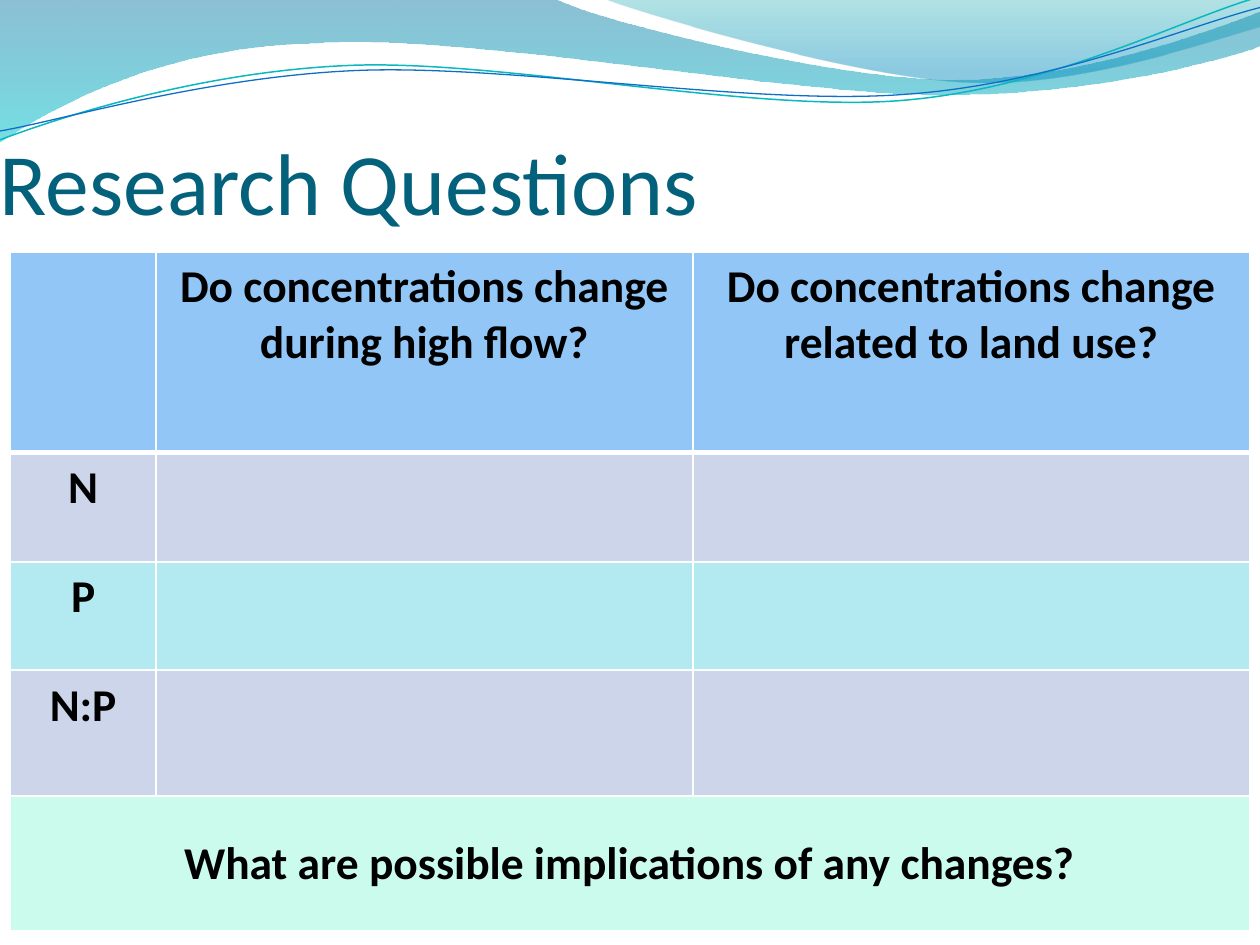
from lxml import etree
from pptx import Presentation
from pptx.dml.color import RGBColor
from pptx.enum.text import MSO_ANCHOR, PP_ALIGN
from pptx.oxml.ns import qn
from pptx.util import Inches, Pt

CENTER = PP_ALIGN.CENTER
TOP, MIDDLE, BOTTOM = MSO_ANCHOR.TOP, MSO_ANCHOR.MIDDLE, MSO_ANCHOR.BOTTOM

THEME = {
    "font": "Calibri", "title_size": 50, "table_size": 26,
    "title": "04617B", "text": "000000", "border": "FFFFFF",
    "header": "91C6F7", "odd": "CCD5EA", "even": "B3EAF2", "footer": "CAFBED",
    "left_wave": [(0, "0074A1", 45), (1, "00C6CF", 55)],
    "right_wave": [(0, "00A1A9", 30), (0.8, "008BBF", 45)],
    "teal_line": ("0AB8BF", 0.85), "blue_line": ("0F6FC6", 0.75),
}

deck = Presentation()
deck.slide_width, deck.slide_height = Inches(10), Inches(7.5)
page = deck.slides.add_slide(deck.slide_layouts[6])


def draw_wave(segments, closed):
    points = [(Inches(x), Inches(y)) for segment in segments
              for x, y in zip(segment[::2], segment[1::2])]
    builder = page.shapes.build_freeform(*points[0])
    builder.add_line_segments(points[1:], close=closed)
    wave = builder.convert_to_shape()
    wave.shadow.inherit = False
    lines = wave._element.spPr.iter(qn("a:lnTo"))
    lines = iter(list(lines))
    for segment in segments[1:]:
        line = next(lines)
        if len(segment) == 6:
            line.addprevious(etree.Element(qn("a:cubicBezTo")))
            curve = line.getprevious()
            for corner in (line, next(lines), next(lines)):
                curve.append(corner[0])
                corner.getparent().remove(corner)
    return wave


def write_text(para, text, size, color, bold):
    span = para.add_run()
    span.text = text
    style = {"name": THEME["font"], "size": Pt(size), "bold": bold}
    for name, value in style.items():
        setattr(span.font, name, value)
    span.font.color.rgb = RGBColor.from_string(color)


left_wave = [
    (0, 0), (4.4, -0.01), (4.76, 0.17, 6.64, 0.63, 7.58, 0.63),
    (8.53, 0.63, 9.58, 0.26, 10, 0.09), (10.01, 0.36),
    (9.83, 0.44, 8.7, 0.76, 7.46, 0.75), (6.22, 0.75, 3.82, 0.28, 2.57, 0.34),
    (1.29, 0.36, 0.46, 0.83, -0.01, 1.13), (0, 0),
]
right_wave = [
    (4.79, -0.01), (5.09, 0.11, 6.82, 0.62, 7.69, 0.65),
    (8.56, 0.69, 9.61, 0.32, 10, 0.21), (10, 0), (4.79, -0.01),
]
for segments, stops in ((left_wave, THEME["left_wave"]), (right_wave, THEME["right_wave"])):
    wave = draw_wave(segments, True)
    wave.line.fill.background()
    wave.fill.gradient()
    wave.fill.gradient_angle = 270
    for stop, (position, color, _) in zip(wave.fill.gradient_stops, stops):
        stop.position = position
        stop.color.rgb = RGBColor.from_string(color)
    colors = wave._element.spPr.find(qn("a:gradFill")).iter(qn("a:srgbClr"))
    for color, (_, _, opacity) in zip(colors, stops):
        etree.SubElement(color, qn("a:alpha")).set("val", str(opacity * 1000))

teal_line = [
    (0, 1.11), (0.48, 0.93, 1.58, 0.57, 2.77, 0.52),
    (3.95, 0.47, 5.93, 0.89, 7.13, 0.8), (8.33, 0.71, 9.38, 0.15, 9.98, -0.02),
]
blue_line = [
    (0, 1.04), (0.47, 0.96, 1.64, 0.61, 2.83, 0.56),
    (4.03, 0.51, 5.97, 0.84, 7.17, 0.75), (8.36, 0.67, 9.41, 0.21, 10, 0.06),
]
for segments, (color, width) in ((teal_line, THEME["teal_line"]), (blue_line, THEME["blue_line"])):
    wave = draw_wave(segments, False)
    wave.fill.background()
    wave.line.color.rgb = RGBColor.from_string(color)
    wave.line.width = Pt(width)

title = page.shapes.add_textbox(0, Inches(0.83), Inches(5.67), Inches(1.02))
frame = title.text_frame
title_format = {"word_wrap": True, "vertical_anchor": BOTTOM, "margin_left": 0,
                "margin_top": Inches(0.05), "margin_right": 0, "margin_bottom": 0}
for name, value in title_format.items():
    setattr(frame, name, value)
write_text(frame.paragraphs[0], "Research Questions", THEME["title_size"], THEME["title"], False)

column_widths = [1.16, 4.26, 4.42]
rows = [
    (1.59, "header", ["", "Do concentrations change during high flow?",
                      "Do concentrations change related to land use?"]),
    (0.87, "odd", ["N", "", ""]),
    (0.86, "even", ["P", "", ""]),
    (1, "odd", ["N:P", "", ""]),
    (1.07, "footer", ["What are possible implications of any changes?", "", ""]),
]
table = page.shapes.add_table(len(rows), len(column_widths), Inches(0.08), Inches(2),
                              Inches(9.84), Inches(5.39)).table
for column, width in zip(table.columns, column_widths):
    column.width = Inches(width)

for row_index, (height, fill, texts) in enumerate(rows):
    table.rows[row_index].height = Inches(height)
    borders = {"a:lnL": 1, "a:lnR": 1, "a:lnT": 3 if row_index == 1 else 1,
               "a:lnB": 3 if row_index == 0 else 1}
    cell_format = {"margin_left": Inches(0.12), "margin_right": Inches(0.12),
                   "margin_top": Inches(0.06), "margin_bottom": Inches(0.06),
                   "vertical_anchor": MIDDLE if fill == "footer" else TOP}
    for column_index, text in enumerate(texts):
        cell = table.cell(row_index, column_index)
        for name, value in cell_format.items():
            setattr(cell, name, value)
        properties = cell._tc.get_or_add_tcPr()
        for side, width in borders.items():
            border = etree.SubElement(properties, qn(side), w=str(Pt(width)))
            solid = etree.SubElement(border, qn("a:solidFill"))
            etree.SubElement(solid, qn("a:srgbClr"), val=THEME["border"])
        cell.fill.solid()
        cell.fill.fore_color.rgb = RGBColor.from_string(THEME[fill])
        if text:
            para = cell.text_frame.paragraphs[0]
            para.alignment = CENTER
            write_text(para, text, THEME["table_size"], THEME["text"], True)

last_row = len(rows) - 1
table.cell(last_row, 0).merge(table.cell(last_row, len(column_widths) - 1))

deck.save("out.pptx")
